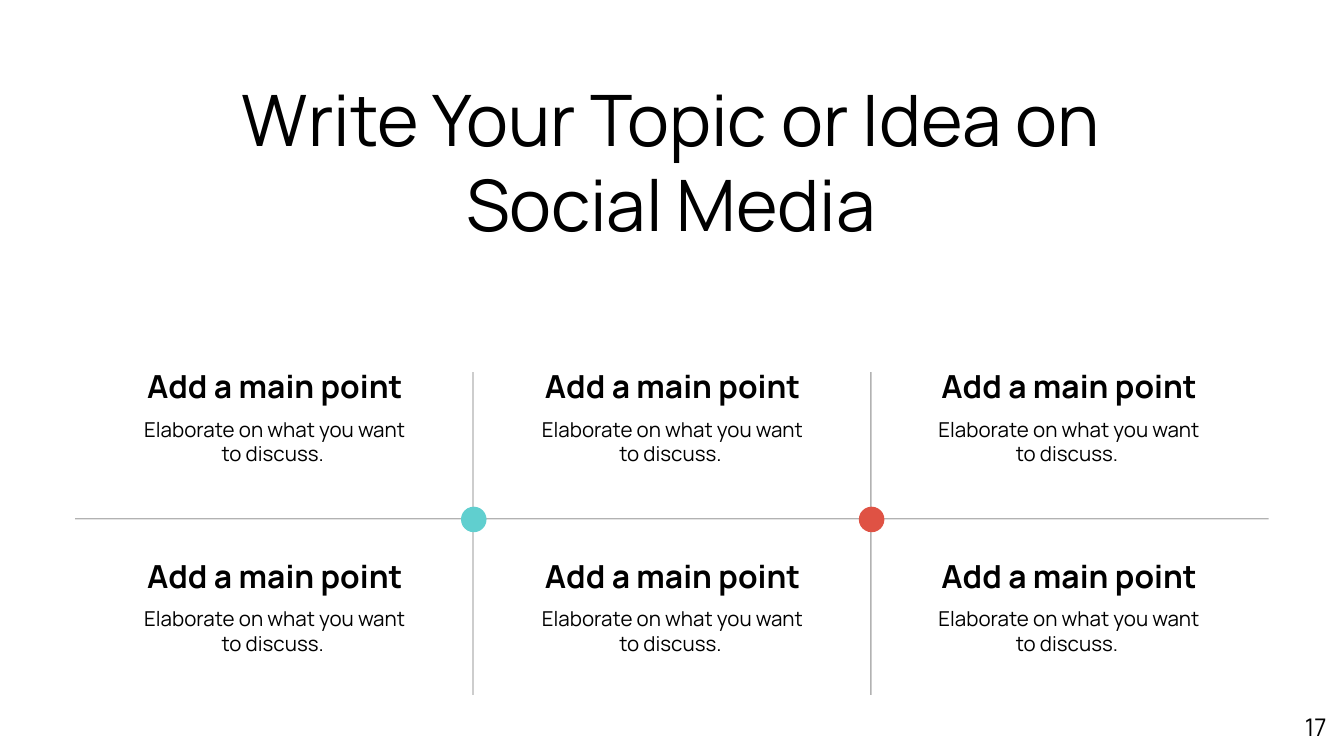
from itertools import product
from typing import NamedTuple

from pptx import Presentation
from pptx.dml.color import RGBColor
from pptx.enum.shapes import MSO_CONNECTOR, MSO_SHAPE
from pptx.enum.text import MSO_ANCHOR, MSO_AUTO_SIZE, PP_ALIGN
from pptx.oxml.ns import qn
from pptx.util import Inches, Pt
from lxml import etree

LINE, OVAL = MSO_CONNECTOR.STRAIGHT, MSO_SHAPE.OVAL
CENTER, RIGHT = PP_ALIGN.CENTER, PP_ALIGN.RIGHT
TOP, MIDDLE = MSO_ANCHOR.TOP, MSO_ANCHOR.MIDDLE
GROW, FIXED = MSO_AUTO_SIZE.SHAPE_TO_FIT_TEXT, MSO_AUTO_SIZE.NONE
FONT, BLACK = "Manrope", "000000"


class Box(NamedTuple):
    left: float
    top: float
    width: float
    height: float


class Rule(NamedTuple):
    x1: float
    y1: float
    x2: float
    y2: float


class Dot(NamedTuple):
    left: float
    top: float
    color: str


def color(code: str) -> RGBColor:
    return RGBColor.from_string(code)


def draw_text(shapes, box: Box, lines: list[str], size: float, bold: bool = False,
              align=CENTER, anchor=TOP, fit=GROW) -> None:
    frame = shapes.add_textbox(*map(Inches, box)).text_frame
    frame.margin_left = frame.margin_right = 0
    frame.margin_top = frame.margin_bottom = 0
    frame.word_wrap = True
    frame.auto_size = fit
    frame.vertical_anchor = anchor
    frame.text = "\n".join(lines)
    for para in frame.paragraphs:
        para.alignment = align
        font = para.font
        font.name, font.size, font.bold = FONT, Pt(size), bold
        font.color.rgb = color(BLACK)


def draw_rule(shapes, rule: Rule) -> None:
    line = shapes.add_connector(LINE, *map(Inches, rule))
    line.line.width = Pt(0.75)
    line.line.color.rgb = color(BLACK)
    props = line._element.spPr
    # Thirty percent opacity, no shadow
    tint = props.find(".//" + qn("a:srgbClr"))
    etree.SubElement(tint, qn("a:alpha"), val="30000")
    etree.SubElement(props, qn("a:effectLst"))


def draw_dot(shapes, dot: Dot, size: float = 0.19) -> None:
    oval = shapes.add_shape(OVAL, Inches(dot.left), Inches(dot.top),
                            Inches(size), Inches(size))
    oval.shadow.inherit = False
    oval.fill.solid()
    oval.fill.fore_color.rgb = color(dot.color)
    oval.line.fill.background()


def draw_point(shapes, left: float, top: float) -> None:
    draw_text(shapes, Box(left, top, 2.29, 0.29), ["Add a main point"], 17, bold=True)
    draw_text(shapes, Box(left, top + 0.37, 2.29, 0.37),
              ["Elaborate on what you want", "to discuss. "], 11)


def main() -> None:
    deck = Presentation()
    # Widescreen, 16 to 9
    deck.slide_width, deck.slide_height = Inches(10), Inches(10 * 9 / 16)
    slide = deck.slides.add_slide(deck.slide_layouts[6])
    shapes = slide.shapes

    # Grid lines
    for x in (3.52, 6.48):
        draw_rule(shapes, Rule(x, 2.77, x, 5.17))
    draw_rule(shapes, Rule(0.56, 3.86, 9.44, 3.86))

    # Title
    draw_text(shapes, Box(1.59, 0.56, 6.81, 1.28),
              ["Write Your Topic or Idea on Social Media"], 38)

    # Dots on the crossings
    for dot in (Dot(3.43, 3.77, "60CFCF"), Dot(6.39, 3.77, "DF5244")):
        draw_dot(shapes, dot)

    # Six points, three to a row
    for top, left in product((2.735, 4.14), (0.9, 3.86, 6.81)):
        draw_point(shapes, left, round(top, 2))

    # Page number
    draw_text(shapes, Box(9.27, 5.19, 0.6, 0.43), ["17"], 13,
              align=RIGHT, anchor=MIDDLE, fit=FIXED)

    deck.save("out.pptx")


if __name__ == "__main__":
    main()
